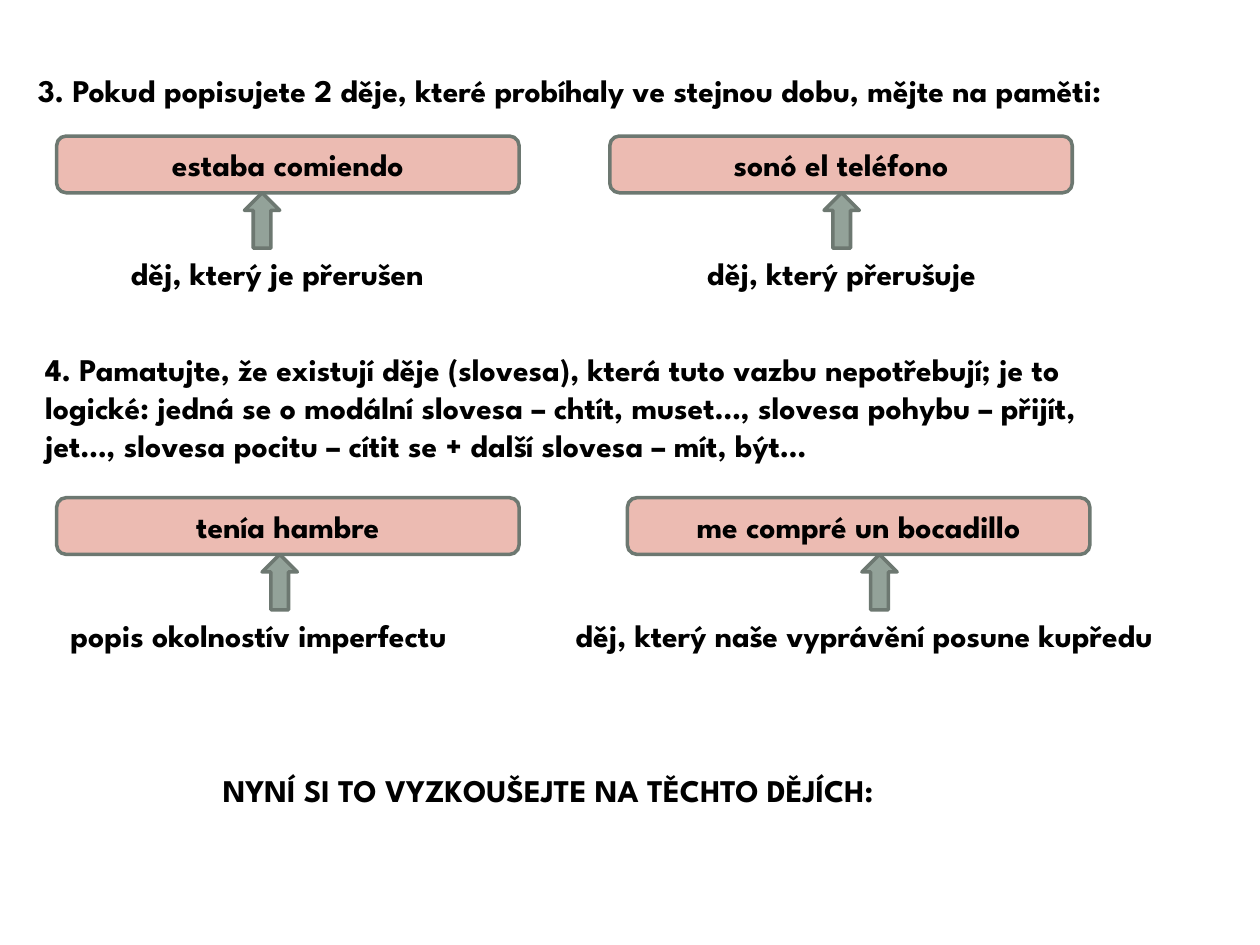
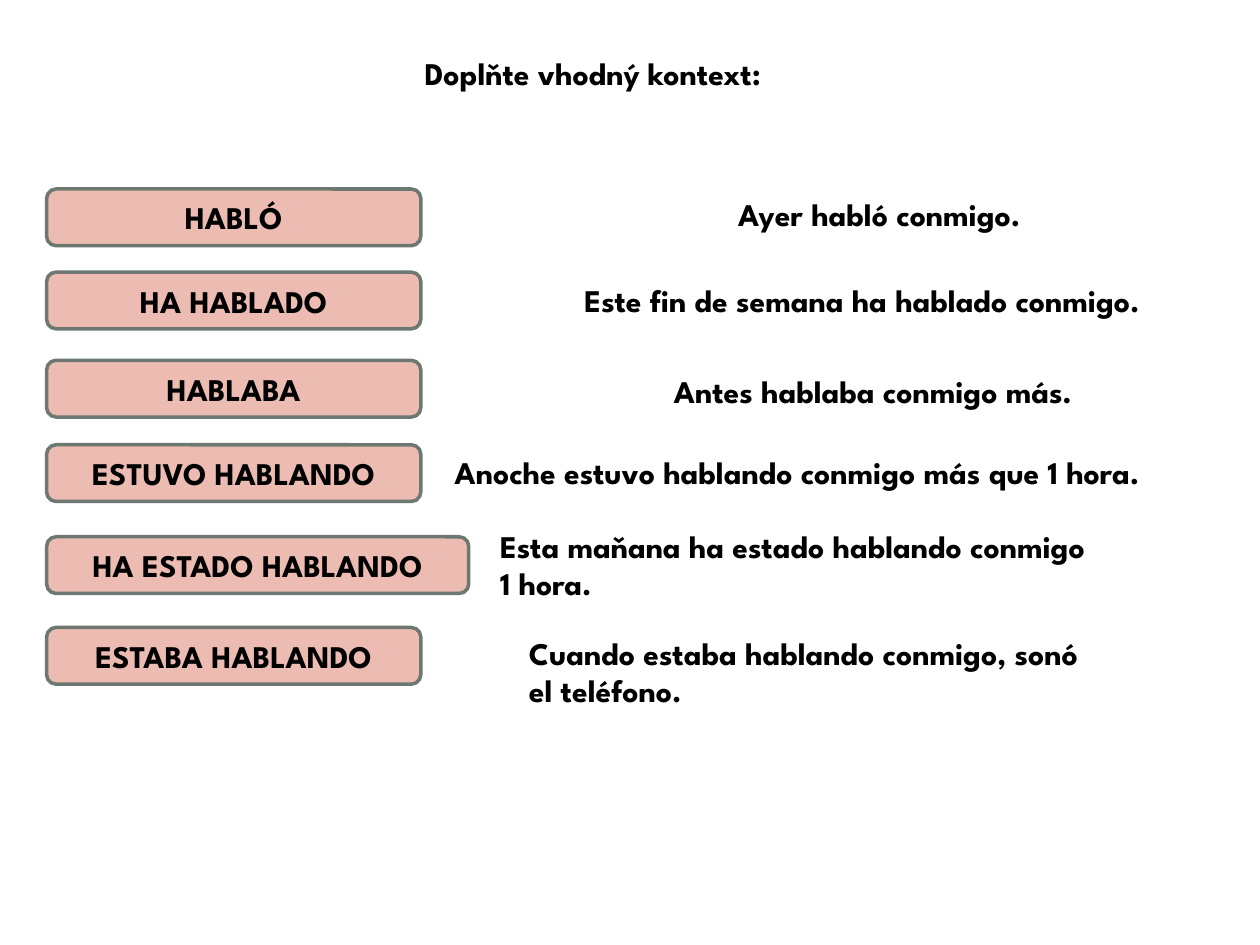
from dataclasses import dataclass

from pptx import Presentation
from pptx.dml.color import RGBColor
from pptx.enum.shapes import MSO_SHAPE
from pptx.enum.text import MSO_ANCHOR, MSO_AUTO_SIZE, PP_ALIGN
from pptx.util import Inches, Pt

ROUNDED = MSO_SHAPE.ROUNDED_RECTANGLE
UP_ARROW = MSO_SHAPE.UP_ARROW
TOP, MIDDLE = MSO_ANCHOR.TOP, MSO_ANCHOR.MIDDLE
LEFT, CENTER = PP_ALIGN.LEFT, PP_ALIGN.CENTER
GROW = MSO_AUTO_SIZE.SHAPE_TO_FIT_TEXT
TITLE_ONLY = 5


@dataclass(frozen=True)
class Theme:
    font: str = "League Spartan"
    size: Pt = Pt(18)
    ink: RGBColor = RGBColor(0x00, 0x00, 0x00)
    phrase_fill: RGBColor = RGBColor(0xEC, 0xBB, 0xB2)
    arrow_fill: RGBColor = RGBColor(0x93, 0xA2, 0x99)
    outline: RGBColor = RGBColor(0x6D, 0x78, 0x71)
    outline_width: Pt = Pt(2)


THEME = Theme()
LINE_HEIGHT = 0.4
EXTRA_LINE = 0.3
PHRASE_HEIGHT = 0.45
PHRASE_WIDTH = 3.67
ARROW_WIDTH, ARROW_HEIGHT = 0.28, 0.44

CONCURRENT_TOP, EXCEPTION_TOP = 1.08, 3.95
EXPLAINED_PHRASES = [
    (0.45, CONCURRENT_TOP, "estaba comiendo", 1.94,
     0.81, 2.78, "děj, který je přerušen", CENTER),
    (4.84, CONCURRENT_TOP, "sonó el teléfono", 6.54,
     5.41, 2.54, "děj, který přerušuje", CENTER),
    (0.45, EXCEPTION_TOP, "tenía hambre", 2.08,
     0.46, 3.57, "popis okolnostív imperfectu", LEFT),
    (4.98, EXCEPTION_TOP, "me compré un bocadillo", 6.84,
     4.47, 5.36, "děj, který naše vyprávění posune kupředu", LEFT),
]
EXCEPTION_RULE = [
    "4. Pamatujte, že existují děje (slovesa), která tuto vazbu nepotřebují; je to",
    "logické: jedná se o modální slovesa – chtít, muset…, slovesa pohybu – přijít,",
    "jet…, slovesa pocitu – cítit se + další slovesa – mít, být…",
]

VERB_LEFT = 0.37
VERB_CONTEXTS = [
    (1.5, 2.97, "HABLÓ", 5.76, 1.5, 2.79, ["Ayer habló conmigo."]),
    (2.16, 2.97, "HA HABLADO", 4.54, 2.18, 5.25,
     ["Este fin de semana ha hablado conmigo."]),
    (2.86, 2.97, "HABLABA", 5.25, 2.9, 3.83, ["Antes hablaba conmigo más."]),
    (3.53, 2.97, "ESTUVO HABLANDO", 3.51, 3.55, 6.52,
     ["Anoche estuvo hablando conmigo más que 1 hora."]),
    (4.26, 3.35, "HA ESTADO HABLANDO", 3.87, 4.13, 5.52,
     ["Esta maňana ha estado hablando conmigo", "1 hora."]),
    (4.98, 2.97, "ESTABA HABLANDO", 4.1, 4.98, 5.33,
     ["Cuando estaba hablando conmigo, sonó", "el teléfono."]),
]


def write(frame, lines, align, anchor, wrap):
    frame.text = "\n".join(lines)
    frame.word_wrap = wrap
    frame.vertical_anchor = anchor
    for paragraph in frame.paragraphs:
        paragraph.alignment = align
        font = paragraph.font
        font.name, font.size, font.bold = THEME.font, THEME.size, True
        font.color.rgb = THEME.ink


def write_growing(frame, lines, align=LEFT):
    write(frame, lines, align, TOP, False)
    frame.auto_size = GROW


def add_titled_slide(deck, heading, left, top, width):
    slide = deck.slides.add_slide(deck.slide_layouts[TITLE_ONLY])
    title = slide.shapes.title
    title.left, title.top = Inches(left), Inches(top)
    title.width, title.height = Inches(width), Inches(LINE_HEIGHT)
    write_growing(title.text_frame, [heading])
    return slide


def add_caption(slide, left, top, width, lines, align=LEFT):
    height = LINE_HEIGHT + EXTRA_LINE * (len(lines) - 1)
    caption = slide.shapes.add_textbox(
        Inches(left), Inches(top), Inches(width), Inches(height))
    write_growing(caption.text_frame, lines, align)


def add_outlined(slide, kind, left, top, width, height, fill):
    shape = slide.shapes.add_shape(
        kind, Inches(left), Inches(top), Inches(width), Inches(height))
    shape.shadow.inherit = False
    shape.fill.solid()
    shape.fill.fore_color.rgb = fill
    shape.line.color.rgb = THEME.outline
    shape.line.width = THEME.outline_width
    return shape


def add_phrase(slide, left, top, width, phrase):
    box = add_outlined(slide, ROUNDED, left, top, width, PHRASE_HEIGHT,
                       THEME.phrase_fill)
    write(box.text_frame, [phrase], CENTER, MIDDLE, True)


def add_explained_phrase(slide, left, top, phrase, arrow_left,
                         caption_left, caption_width, caption, align):
    arrow_top = top + PHRASE_HEIGHT
    add_phrase(slide, left, top, PHRASE_WIDTH, phrase)
    add_outlined(slide, UP_ARROW, arrow_left, arrow_top,
                 ARROW_WIDTH, ARROW_HEIGHT, THEME.arrow_fill)
    add_caption(slide, caption_left, arrow_top + ARROW_HEIGHT,
                caption_width, [caption], align)


def build_rules(deck):
    slide = add_titled_slide(
        deck,
        "3. Pokud popisujete 2 děje, které probíhaly ve stejnou dobu, mějte na paměti:",
        0.2, 0.51, 9.64)
    for explained in EXPLAINED_PHRASES:
        add_explained_phrase(slide, *explained)
    add_caption(slide, 0.26, 2.73, 9.44, EXCEPTION_RULE)
    add_caption(slide, 1.67, 6.07, 5.59,
                ["NYNÍ SI TO VYZKOUŠEJTE NA TĚCHTO DĚJÍCH:"])


def build_exercise(deck):
    slide = add_titled_slide(deck, "Doplňte vhodný kontext:", 3.27, 0.38, 3.2)
    for verb_top, verb_width, verb, left, top, width, context in VERB_CONTEXTS:
        add_phrase(slide, VERB_LEFT, verb_top, verb_width, verb)
        add_caption(slide, left, top, width, context)


def main():
    deck = Presentation()
    deck.slide_width, deck.slide_height = Inches(10), Inches(7.5)
    build_rules(deck)
    build_exercise(deck)
    deck.save("out.pptx")


if __name__ == "__main__":
    main()
